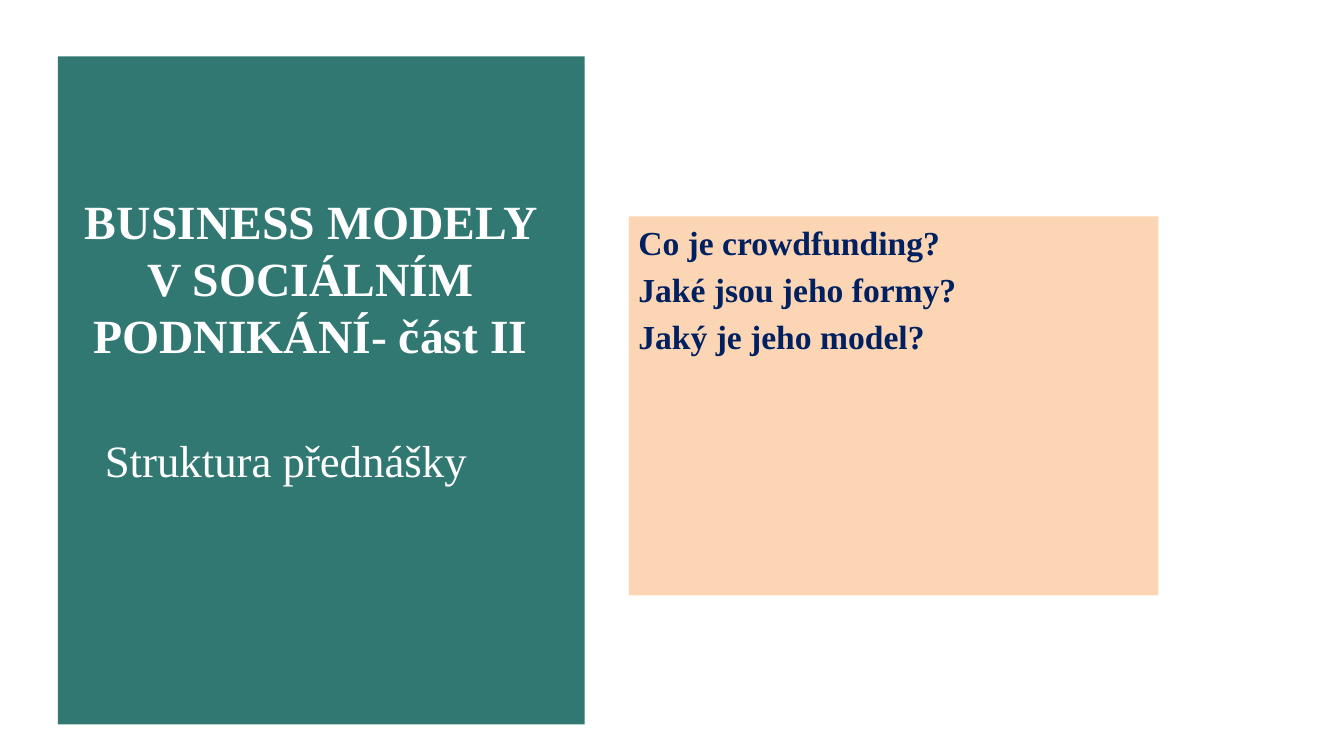
from dataclasses import dataclass

import pptx
import pptx.dml.color
import pptx.enum.shapes
import pptx.enum.text
import pptx.util
from pptx.util import Inches

ALIGN = pptx.enum.text.PP_ALIGN
ANCHOR = pptx.enum.text.MSO_ANCHOR


@dataclass(frozen=True)
class Theme:
    font: str = "Times New Roman"
    teal: str = "307871"
    peach: str = "FCD5B5"
    navy: str = "002060"
    white: str = "FFFFFF"
    title_size: float = 25.5
    subtitle_size: float = 24
    question_size: float = 18


@dataclass(frozen=True)
class Box:
    left: float
    top: float
    width: float
    height: float

    def lengths(self) -> tuple:
        return tuple(map(Inches, (self.left, self.top, self.width, self.height)))


THEME = Theme()
PANEL_BOX = Box(0.43, 0.42, 3.92, 4.97)
TITLE_BOX = Box(0.55, 0.96, 3.52, 1.87)
SUBTITLE_BOX = Box(0.71, 3.18, 2.96, 0.48)
QUESTIONS_BOX = Box(4.68, 1.61, 3.94, 2.82)
QUESTIONS = ("Co je crowdfunding?", "Jaké jsou jeho formy?", "Jaký je jeho model?")


def add_panel(slide, box: Box, fill: str):
    panel = slide.shapes.add_shape(
        pptx.enum.shapes.MSO_SHAPE.RECTANGLE, *box.lengths())
    panel.shadow.inherit = False
    panel.fill.solid()
    panel.fill.fore_color.rgb = pptx.dml.color.RGBColor.from_string(fill)
    panel.line.fill.background()
    return panel


def write(shape, *lines: str, size: float, color: str, bold: bool = False,
          align=ALIGN.LEFT, anchor=ANCHOR.TOP, gap: float = 0,
          inset_bottom: float = 0.04) -> None:
    """Write one paragraph per line, with gap points between paragraphs."""
    frame = shape.text_frame
    frame.word_wrap = True
    frame.auto_size = pptx.enum.text.MSO_AUTO_SIZE.NONE
    frame.vertical_anchor = anchor
    frame.margin_left = frame.margin_right = Inches(0.07)
    frame.margin_top = Inches(0.04)
    frame.margin_bottom = Inches(inset_bottom)
    for index, line in enumerate(lines):
        paragraph = frame.add_paragraph() if index else frame.paragraphs[0]
        paragraph.alignment = align
        if index:
            paragraph.space_before = pptx.util.Pt(gap)
        run = paragraph.add_run()
        run.text = line
        run.font.name = THEME.font
        run.font.size = pptx.util.Pt(size)
        run.font.bold = bold
        run.font.color.rgb = pptx.dml.color.RGBColor.from_string(color)


def main() -> None:
    presentation = pptx.Presentation()
    presentation.slide_width = Inches(10)
    presentation.slide_height = Inches(10) * 9 // 16
    slide = presentation.slides.add_slide(presentation.slide_layouts[5])

    title = slide.shapes.title
    title.left, title.top, title.width, title.height = TITLE_BOX.lengths()
    write(title, "BUSINESS MODELY V SOCIÁLNÍM PODNIKÁNÍ- část II",
          size=THEME.title_size, color=THEME.white, bold=True,
          align=ALIGN.CENTER, anchor=ANCHOR.BOTTOM, inset_bottom=0.13)

    title_panel = add_panel(slide, PANEL_BOX, THEME.teal)
    title.element.addprevious(title_panel.element)  # behind the title

    questions = add_panel(slide, QUESTIONS_BOX, THEME.peach)
    write(questions, *QUESTIONS, size=THEME.question_size, color=THEME.navy,
          bold=True, gap=3.6)

    subtitle = slide.shapes.add_textbox(*SUBTITLE_BOX.lengths())
    write(subtitle, "Struktura přednášky",
          size=THEME.subtitle_size, color=THEME.white)

    presentation.save("out.pptx")


if __name__ == "__main__":
    main()
